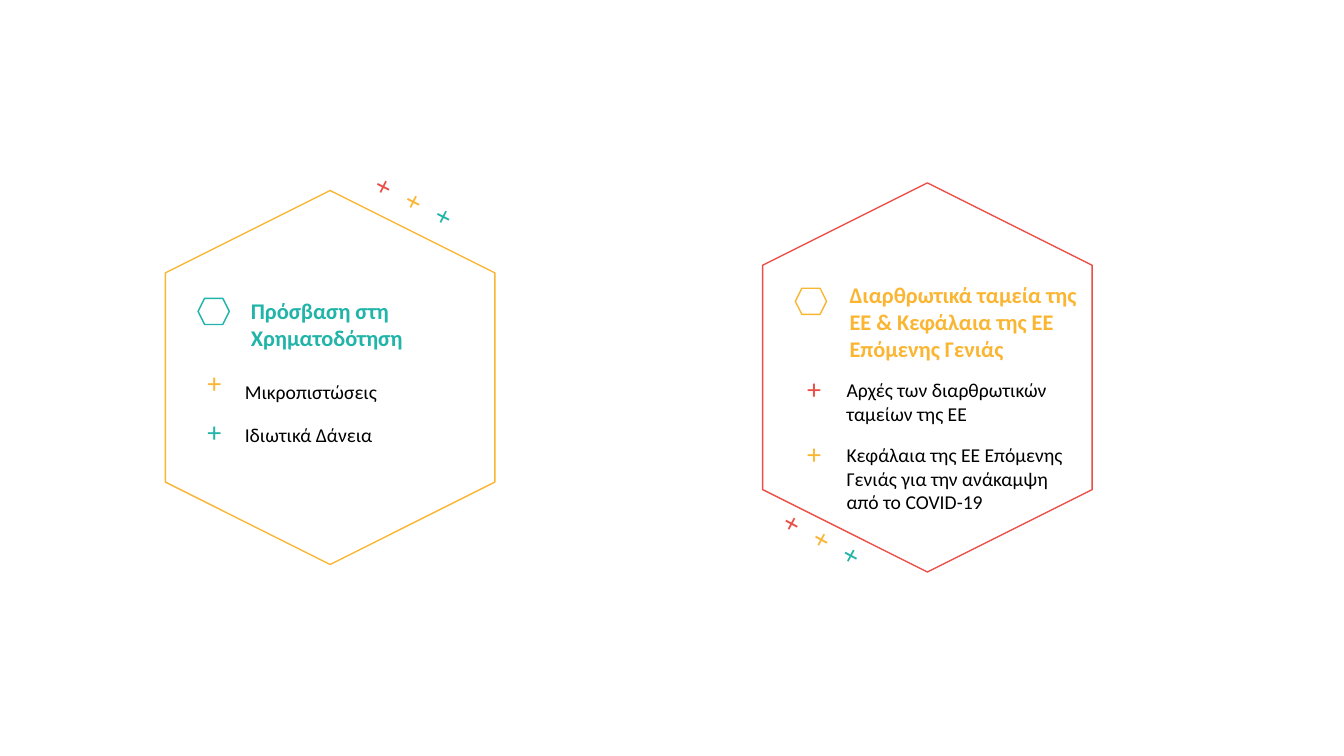
from pptx import Presentation
from pptx.dml.color import RGBColor
from pptx.enum.shapes import MSO_SHAPE
from pptx.util import Inches, Pt

HEXAGON = MSO_SHAPE.HEXAGON
CELL = Inches(0.1)
COLUMNS, ROWS = 133.33, 75
MIDDLE_ROW = 37.45
TEAL, YELLOW, RED, BLACK = "21B4A9", "FAB632", "EA4E46", "000000"


def color(code):
    return RGBColor.from_string(code)


def cells(*counts):
    return [round(count * CELL) for count in counts]


def add_hexagon(page, box, line, rotation=0):
    hexagon = page.shapes.add_shape(HEXAGON, *cells(*box))
    hexagon.adjustments[0] = 0.25
    hexagon.rotation = rotation
    hexagon.shadow.inherit = False
    hexagon.fill.background()
    hexagon.line.color.rgb = color(line)
    hexagon.line.width = Pt(1)


def add_text(page, box, paragraphs, size=14, bold=False, spacing=None, gap=0, rotation=0):
    """Each paragraph is a list of (text, colour) spans; gap is points between paragraphs."""
    text_box = page.shapes.add_textbox(*cells(*box))
    text_box.rotation = rotation
    frame = text_box.text_frame
    frame.word_wrap = True
    for index, spans in enumerate(paragraphs):
        para = frame.add_paragraph() if index else frame.paragraphs[0]
        para.line_spacing = spacing
        para.space_before = Pt(gap if index else 0)
        for text, code in spans:
            span = para.add_run()
            span.text = text
            span.font.name = "Calibri"
            span.font.size = Pt(size)
            span.font.bold = bold
            span.font.color.rgb = color(code)


def add_plus_trail(page, left, top, rotation):
    """Narrow rotated box in which each plus sign wraps to its own line."""
    spans = [("+", code) for code in (RED, YELLOW, TEAL)]
    add_text(page, (left, top, 4.3, 11.1), [spans], size=20, rotation=rotation)


def add_panel(page, center, height, outline, accent, icon_top, title, title_box,
              items, item_box, item_format, plus_box, plus_colors, plus_gap):
    """Build one hexagon panel; the left of each box is counted from its centre."""

    def from_center(box):
        return (center + box[0], *box[1:])

    add_text(page, from_center(item_box), [[(item, BLACK)] for item in items], **item_format)
    add_text(page, from_center(title_box), [[(title, accent)]], size=16, bold=True)
    add_hexagon(page, from_center((-13.1, icon_top, 3.1, 2.6)), accent)
    width = 32.7
    outline_box = (-height / 2, MIDDLE_ROW - width / 2, height, width)
    add_hexagon(page, from_center(outline_box), outline, rotation=90)
    add_text(page, from_center(plus_box), [[("+", code)] for code in plus_colors],
             size=20, gap=plus_gap)


def main():
    deck = Presentation()
    deck.slide_width, deck.slide_height = cells(COLUMNS, ROWS)
    page = deck.slides.add_slide(deck.slide_layouts[6])

    add_panel(
        page, center=32.75, height=37.1, outline=YELLOW, accent=TEAL, icon_top=29.6,
        title="Πρόσβαση στη Χρηματοδότηση", title_box=(-8.85, 29, 24.1, 6.4),
        items=["Μικροπιστώσεις", "Ιδιωτικά Δάνεια"],
        item_box=(-9.45, 35.4, 26.2, 9.4), item_format={"spacing": 1.79},
        plus_box=(-13.15, 35.8, 3, 9.3), plus_colors=[YELLOW, TEAL], plus_gap=11)
    add_panel(
        page, center=92, height=38.6, outline=RED, accent=YELLOW, icon_top=28.6,
        title="Διαρθρωτικά ταμεία της ΕΕ & Κεφάλαια της ΕΕ Επόμενης Γενιάς",
        title_box=(-8.7, 27.4, 25, 9.1),
        items=["Αρχές των διαρθρωτικών ταμείων της ΕΕ",
               "Κεφάλαια της ΕΕ Επόμενης Γενιάς για την ανάκαμψη από το COVID-19"],
        item_box=(-9, 37, 25, 14.6), item_format={"gap": 12.8},
        plus_box=(-12.9, 36.4, 3, 10.8), plus_colors=[RED, YELLOW], plus_gap=22)

    add_plus_trail(page, 38.9, 14, 296.6)
    add_plus_trail(page, 79.4, 47.5, 298.4)
    deck.save("out.pptx")


if __name__ == "__main__":
    main()
